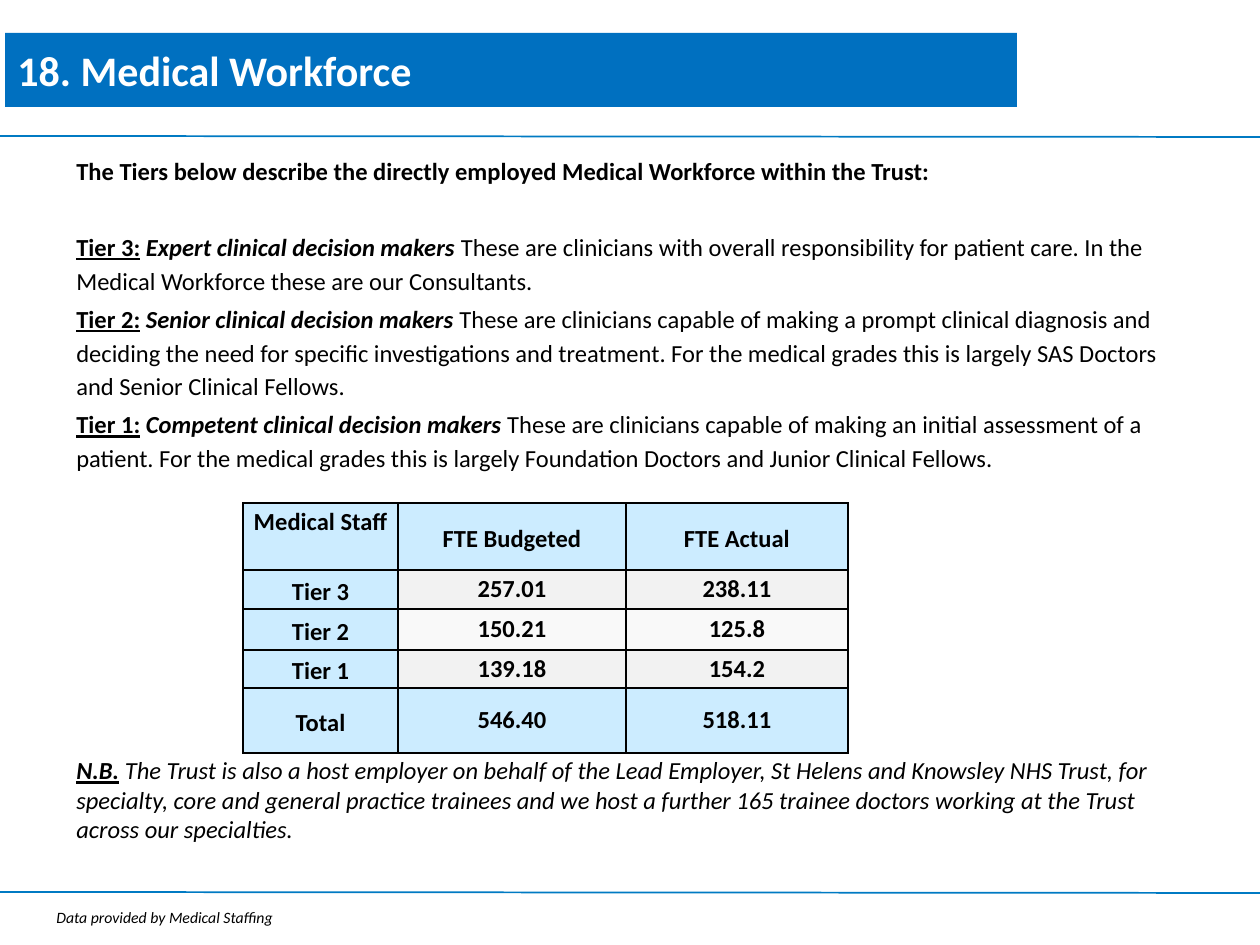
"""Build the Medical Workforce slide."""
from lxml import etree
from pptx import Presentation
from pptx.dml.color import RGBColor
from pptx.enum.shapes import MSO_CONNECTOR, MSO_SHAPE
from pptx.enum.text import MSO_ANCHOR, PP_ALIGN
from pptx.oxml import parse_xml
from pptx.oxml.ns import nsdecls, qn
from pptx.util import Emu, Pt

STRAIGHT = MSO_CONNECTOR.STRAIGHT
RECTANGLE = MSO_SHAPE.RECTANGLE
TOP, MIDDLE = MSO_ANCHOR.TOP, MSO_ANCHOR.MIDDLE
CENTER = PP_ALIGN.CENTER

FONT = "Calibri"
HEADER_FILL = "CCECFF"
TIERS = [
    ("Tier 3:", "Expert clinical decision makers",
     " These are clinicians with overall responsibility for patient care. "
     "In the Medical Workforce these are our Consultants."),
    ("Tier 2:", "Senior clinical decision makers",
     " These are clinicians capable of making a prompt clinical diagnosis and "
     "deciding the need for specific investigations and treatment. For the "
     "medical grades this is largely SAS Doctors and Senior Clinical Fellows."),
    ("Tier 1:", "Competent clinical decision makers",
     " These are clinicians capable of making an initial assessment of a "
     "patient. For the medical grades this is largely Foundation Doctors and "
     "Junior Clinical Fellows."),
]
STAFF_ROWS = [
    ("Medical Staff", "FTE Budgeted", "FTE Actual"),
    ("Tier 3", "257.01", "238.11"),
    ("Tier 2", "150.21", "125.8"),
    ("Tier 1", "139.18", "154.2"),
    ("Total", "546.40", "518.11"),
]
ROW_FILLS = [HEADER_FILL, "F2F2F2", "F9F9F9", "F2F2F2", HEADER_FILL]
ROW_HEIGHTS = [67, 39, 41, 38, 65]
COL_WIDTHS = [155, 228, 222]


def px(n):
    return Emu(round(n * 914400 / 126))


def rgb(value):
    return RGBColor.from_string(value)


def add_run(p, text, size=14, color="000000", bold=False, italic=False, underline=False):
    r = p.add_run()
    r.text = text
    font = r.font
    font.name, font.size = FONT, Pt(size)
    font.bold, font.italic, font.underline = bold, italic, underline
    font.color.rgb = rgb(color)


def add_text_box(slide, x, y, w, h):
    tf = slide.shapes.add_textbox(px(x), px(y), px(w), px(h)).text_frame
    tf.word_wrap = True
    return tf


def add_rule(slide, y):
    line = slide.shapes.add_connector(STRAIGHT, px(0), px(y), px(1260), px(y + 1))
    line.line.color.rgb = rgb("007AC3")
    line.line.width = Pt(1)
    etree.SubElement(line._element.spPr, qn("a:effectLst"))


def add_title(slide, text):
    sp = slide.shapes.add_shape(RECTANGLE, px(5), px(33), px(1012), px(74))
    sp.shadow.inherit = False
    sp.fill.solid()
    sp.fill.fore_color.rgb = rgb("0070C0")
    sp.line.fill.background()
    tf = sp.text_frame
    tf.word_wrap = True
    tf.vertical_anchor = MIDDLE
    p = tf.paragraphs[0]
    p.alignment = PP_ALIGN.LEFT
    add_run(p, text, 24, "FFFFFF", bold=True)


def add_tiers(slide):
    tf = add_text_box(slide, 64, 145, 1124, 345)
    p = tf.paragraphs[0]
    p.line_spacing = 1.15
    add_run(p, "The Tiers below describe the directly employed Medical Workforce "
               "within the Trust:", bold=True)
    for i, (tier, role, description) in enumerate(TIERS):
        p = tf.add_paragraph()
        p.line_spacing = 1.15
        p.space_before = Pt(2.4 if i else 24.4)
        add_run(p, tier, bold=True, underline=True)
        add_run(p, " ")
        add_run(p, role, bold=True, italic=True)
        add_run(p, description)


def set_borders(cell):
    tc_pr = cell._tc.get_or_add_tcPr()
    for i, side in enumerate(("lnL", "lnR", "lnT", "lnB")):
        tc_pr.insert(i, parse_xml(
            f'<a:{side} {nsdecls("a")} w="12700"><a:solidFill>'
            f'<a:srgbClr val="000000"/></a:solidFill></a:{side}>'))


def fill_cell(cell, text, fill, is_label, anchor):
    cell.fill.solid()
    cell.fill.fore_color.rgb = rgb(fill)
    cell.vertical_anchor = anchor
    cell.margin_left = cell.margin_right = px(9 if is_label else 0)
    cell.margin_top = cell.margin_bottom = 0
    p = cell.text_frame.paragraphs[0]
    p.alignment = CENTER
    if is_label:
        p.line_spacing = 1.15
    add_run(p, text, bold=True)
    set_borders(cell)


def add_staff_table(slide):
    table = slide.shapes.add_table(
        len(STAFF_ROWS), len(COL_WIDTHS), px(243), px(503),
        px(sum(COL_WIDTHS)), px(sum(ROW_HEIGHTS))).table
    table.first_row = table.horz_banding = False
    for column, width in zip(table.columns, COL_WIDTHS):
        column.width = px(width)
    for i, (values, fill, height) in enumerate(zip(STAFF_ROWS, ROW_FILLS, ROW_HEIGHTS)):
        table.rows[i].height = px(height)
        for j, text in enumerate(values):
            fill_cell(table.cell(i, j), text, fill if j else HEADER_FILL,
                      i == 0 or j == 0, MIDDLE if i or j else TOP)


def add_notes(slide):
    p = add_text_box(slide, 64, 749, 1124, 102).paragraphs[0]
    add_run(p, "N.B.", bold=True, italic=True, underline=True)
    add_run(p, " The Trust is also a host employer on behalf of the Lead Employer, "
               "St Helens and Knowsley NHS Trust, for specialty, core and general "
               "practice trainees and we host a further 165 trainee doctors working "
               "at the Trust across our specialties.", italic=True)
    p = add_text_box(slide, 44, 902, 297, 32).paragraphs[0]
    add_run(p, "Data provided by Medical Staffing", 9, italic=True)


def main():
    prs = Presentation()
    prs.slide_width, prs.slide_height = px(1260), px(945)
    slide = prs.slides.add_slide(prs.slide_layouts[6])
    for y in (136, 892):
        add_rule(slide, y)
    add_title(slide, "18. Medical Workforce")
    add_tiers(slide)
    add_notes(slide)
    add_staff_table(slide)
    prs.save("out.pptx")


if __name__ == "__main__":
    main()
